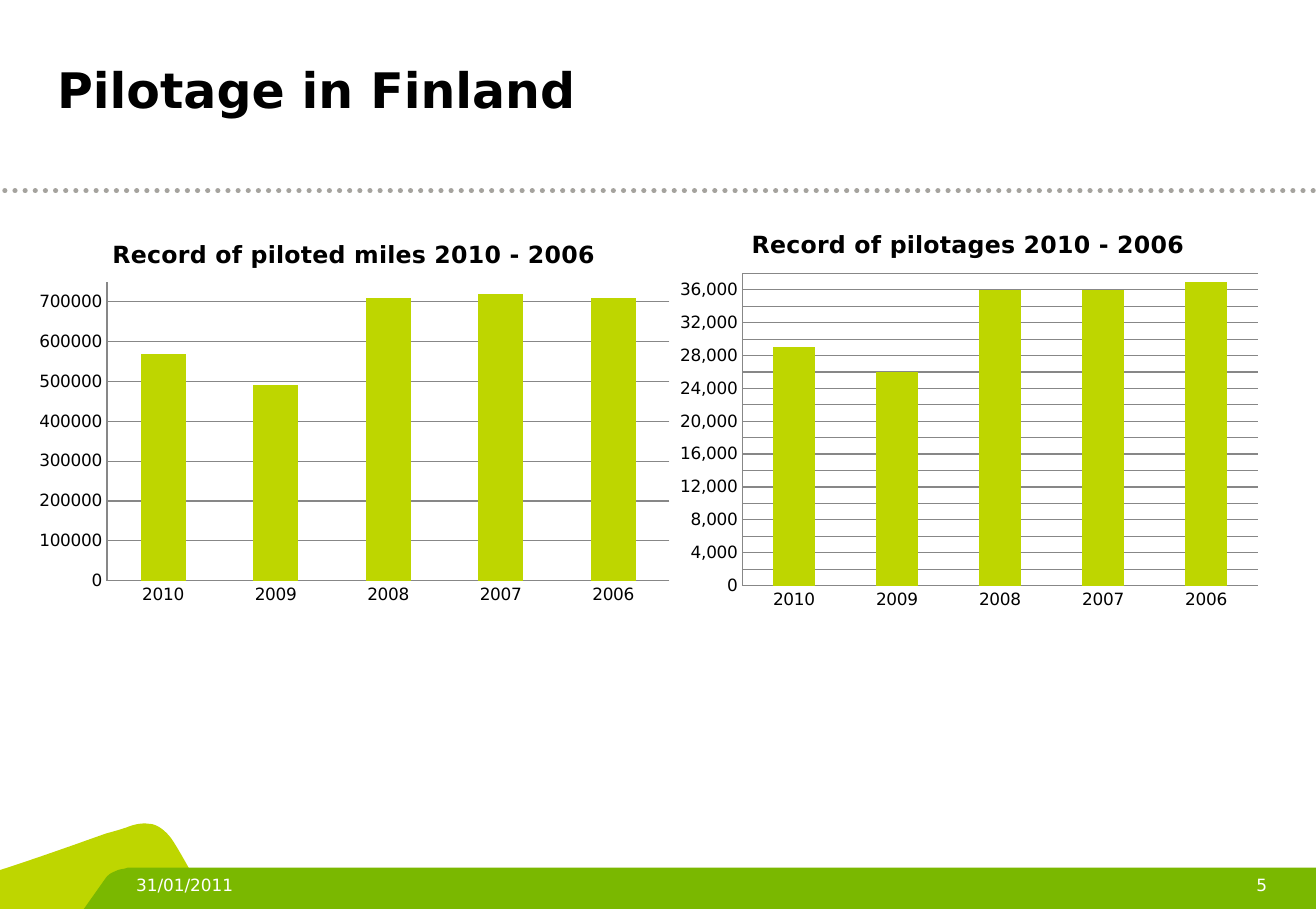
from lxml import etree
from pptx import Presentation
from pptx.chart.data import CategoryChartData
from pptx.dml.color import RGBColor
from pptx.enum.chart import XL_CHART_TYPE as ChartType, XL_TICK_MARK as TickMark
from pptx.enum.dml import MSO_LINE
from pptx.enum.shapes import MSO_CONNECTOR as Connector
from pptx.enum.text import MSO_ANCHOR as Anchor, PP_ALIGN as Align
from pptx.oxml.ns import qn
from pptx.util import Inches, Pt

FONT = "DejaVu Sans"
LIME, GREEN, GREY, AXIS_GREY = "BED600", "7AB800", "A5A39E", "878787"
BLACK, WHITE = "000000", "FFFFFF"
WIDTH, HEIGHT = 10.83, 7.48
YEARS = ["2010", "2009", "2008", "2007", "2006"]

# Outlines: a pair is a straight step, three pairs are a Bezier curve.
LIME_HILL = [
    (0, 7.48), (1.74, 7.48),
    ((1.74, 7.48), (1.47, 6.98), (1.41, 6.9)),
    ((1.35, 6.82), (1.28, 6.78), (1.23, 6.78)),
    ((1.18, 6.77), (1.11, 6.78), (1.04, 6.81)),
    ((0.97, 6.83), (1.05, 6.81), (0.87, 6.86)),
    ((0.7, 6.92), (0.34, 7.05), (0, 7.16)),
]
GREEN_BAND = [
    (1.05, 7.14), (WIDTH, 7.14), (WIDTH, HEIGHT), (0.69, 7.48), (0.86, 7.24),
    ((0.9, 7.18), (0.93, 7.18), (0.97, 7.16)),
    ((1, 7.15), (1.03, 7.15), (1.05, 7.14)),
]


def color(hex_value):
    return RGBColor.from_string(hex_value)


def style_font(font, size, hex_value, bold=False):
    font.name, font.size, font.bold = FONT, Pt(size), bold
    font.color.rgb = color(hex_value)


def write_text(shape, box, text, size, hex_value, bold=False):
    shape.left, shape.top, shape.width, shape.height = map(Inches, box)
    frame = shape.text_frame
    frame.word_wrap = True
    frame.vertical_anchor = Anchor.TOP
    frame.margin_left = frame.margin_right = 0
    frame.margin_top = frame.margin_bottom = 0
    para = frame.paragraphs[0]
    para.alignment = Align.LEFT
    span = para.add_run()
    span.text = text
    style_font(span.font, size, hex_value, bold)


def trace(outline, steps=12):
    """Turn an outline into points, sampling its curves."""
    points = []
    for part in outline:
        if not isinstance(part[0], tuple):
            points.append(part)
            continue
        corners = (points[-1], *part)
        for step in range(1, steps + 1):
            t = step / steps
            weights = ((1 - t) ** 3, 3 * t * (1 - t) ** 2, 3 * t * t * (1 - t), t ** 3)
            points.append(tuple(
                sum(weight * corner[axis] for weight, corner in zip(weights, corners))
                for axis in (0, 1)))
    return points


def add_outline(page, outline, fill):
    points = [(Inches(x), Inches(y)) for x, y in trace(outline)]
    builder = page.shapes.build_freeform(*points[0])
    builder.add_line_segments(points[1:], close=True)
    shape = builder.convert_to_shape()
    shape.shadow.inherit = False
    shape.fill.solid()
    shape.fill.fore_color.rgb = color(fill)
    shape.line.fill.background()


def add_divider(page, left, top, right):
    divider = page.shapes.add_connector(
        Connector.STRAIGHT, Inches(left), Inches(top), Inches(right), Inches(top))
    divider.line.color.rgb = color(GREY)
    divider.line.width = Pt(3)
    divider.line.dash_style = MSO_LINE.ROUND_DOT
    properties = divider._element.spPr
    properties.find(qn("a:ln")).set("cap", "rnd")
    etree.SubElement(properties, qn("a:effectLst"))


def add_footer(page, top):
    add_outline(page, LIME_HILL, LIME)
    add_outline(page, GREEN_BAND, GREEN)
    for left, width, text in ((1.12, 1.42, "31/01/2011"), (10.34, 0.47, "5")):
        box = (left, top, width, 0.24)
        write_text(page.shapes.add_textbox(0, 0, 0, 0), box, text, 10, WHITE)


def set_layout(parent, before, **settings):
    """Place a chart part by fractions of the chart, ahead of the named element."""
    for old in parent.findall(qn("c:layout")):
        parent.remove(old)
    layout = etree.Element(qn("c:layout"))
    manual = etree.SubElement(layout, qn("c:manualLayout"))
    for name, value in settings.items():
        etree.SubElement(manual, qn(f"c:{name}")).set("val", str(value))
    parent.find(qn(before)).addprevious(layout)


def style_axis(axis):
    axis.major_tick_mark = axis.minor_tick_mark = TickMark.NONE
    axis.format.line.color.rgb = color(AXIS_GREY)
    style_font(axis.tick_labels.font, 10, BLACK)


def add_record_chart(page, box, plot_box, title, title_corner, values, top_value,
                     number_format, unit):
    data = CategoryChartData(number_format=number_format)
    data.categories = YEARS
    data.add_series("Series 1", values)
    chart = page.shapes.add_chart(ChartType.COLUMN_CLUSTERED, *map(Inches, box), data).chart
    style_font(chart.font, 10, BLACK)
    chart.has_legend = False
    left, top, width, height = box

    chart.has_title = True
    span = chart.chart_title.text_frame.paragraphs[0].add_run()
    span.text = title
    style_font(span.font, 14, BLACK, bold=True)
    chart.chart_title.include_in_layout = False
    title_left, title_top = title_corner
    set_layout(chart.chart_title._element, "c:overlay", xMode="edge", yMode="edge",
               x=(title_left - left) / width, y=(title_top - top) / height)

    plot_left, plot_top, plot_width, plot_height = plot_box
    plot_area = chart._chartSpace.chart.plotArea
    set_layout(plot_area, "c:barChart", layoutTarget="inner", xMode="edge", yMode="edge",
               x=(plot_left - left) / width, y=(plot_top - top) / height,
               w=plot_width / width, h=plot_height / height)

    plot = chart.plots[0]
    plot.vary_by_categories = False
    plot.gap_width = 150
    fill = plot.series[0].format.fill
    fill.solid()
    fill.fore_color.rgb = color(LIME)

    style_axis(chart.category_axis)
    scale = chart.value_axis
    style_axis(scale)
    scale.minimum_scale, scale.maximum_scale = 0, top_value
    scale.major_unit = unit
    scale.has_major_gridlines = True
    scale.major_gridlines.format.line.color.rgb = color(AXIS_GREY)
    scale.tick_labels.number_format = number_format
    scale.tick_labels.number_format_is_linked = False


def build_pilotage_page(deck):
    page = deck.slides.add_slide(deck.slide_layouts[5])
    add_footer(page, 7.2)
    add_divider(page, 0.04, 1.57, WIDTH)
    write_text(page.shapes.title, (0.47, 0.49, 7.78, 1.01),
               "Pilotage in Finland", 29, BLACK, bold=True)
    add_record_chart(page, (0.22, 1.81, 5.39, 3.23), (0.88, 2.32, 4.63, 2.46),
                     "Record of piloted miles 2010 - 2006", (0.89, 1.92),
                     (570000, 490000, 710000, 720000, 710000), 750000, "General", 100000)
    add_record_chart(page, (5.49, 1.73, 4.96, 3.35), (6.11, 2.25, 4.24, 2.57),
                     "Record of pilotages 2010 - 2006", (6.15, 1.84),
                     (29000, 26000, 36000, 36000, 37000), 38000, "#,##0", 2000)


def main():
    deck = Presentation()
    deck.slide_width, deck.slide_height = Inches(WIDTH), Inches(HEIGHT)
    build_pilotage_page(deck)
    deck.save("out.pptx")


if __name__ == "__main__":
    main()
